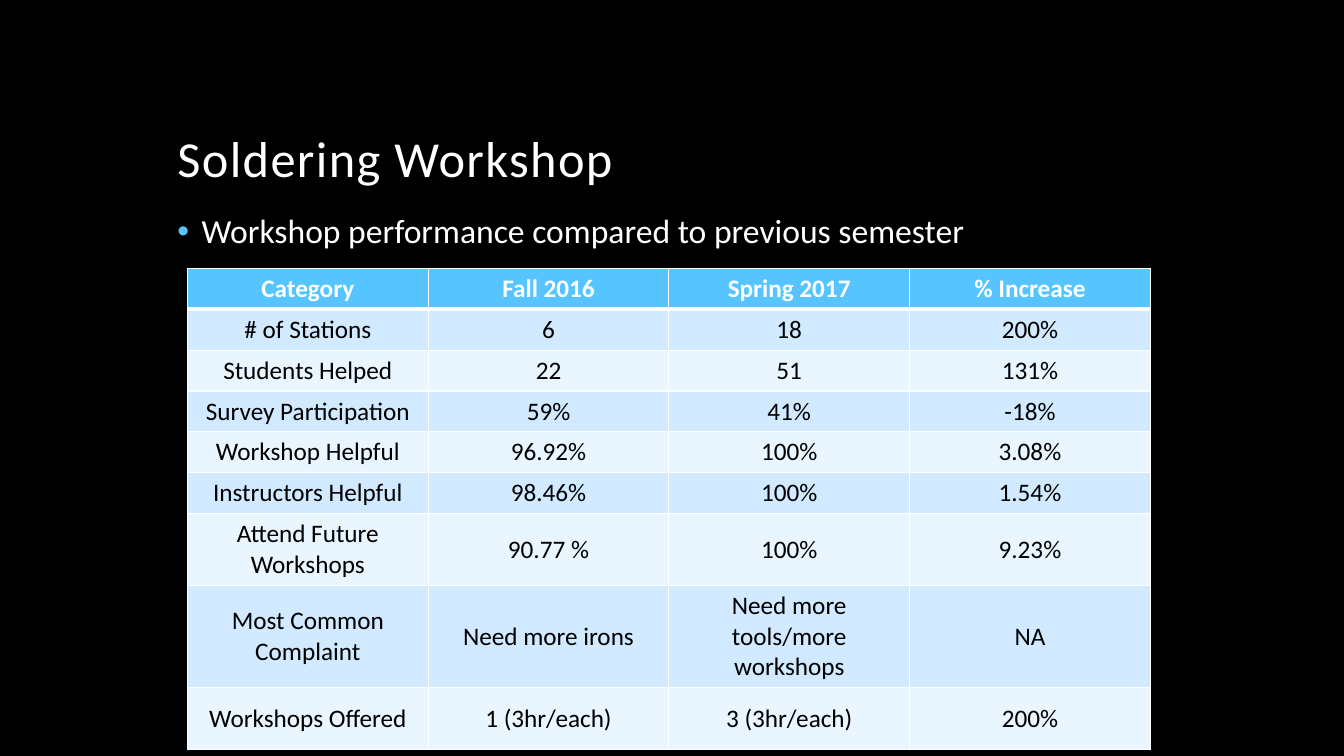
from dataclasses import dataclass

from lxml import etree
from pptx import Presentation, util as u
from pptx.dml.color import RGBColor
from pptx.enum import text
from pptx.oxml import ns


@dataclass(frozen=True)
class Theme:
    font: str = "Calibri"
    background: str = "000000"
    light: str = "FFFFFF"
    dark: str = "000000"
    accent: str = "56C5FF"
    bands: tuple = ("D1EAFF", "E9F5FF")
    title_size: int = 36
    body_size: int = 24
    table_size: int = 18
    thin: int = 1
    thick: int = 3


def apply(target, values):
    for name, value in values.items():
        setattr(target, name, value)


def add_xml(parent, tag, **attributes):
    return etree.SubElement(parent, ns.qn(tag), attributes)


class WorkshopSlide:
    def __init__(self, deck, theme):
        self.theme = theme
        self.width, self.height = deck.slide_width, deck.slide_height
        self.slide = deck.slides.add_slide(deck.slide_layouts[1])
        self.paint(self.slide.background, theme.background)

    def x(self, percent):
        return round(self.width * percent / 100)

    def y(self, percent):
        return round(self.height * percent / 100)

    def place(self, left, top, width, height):
        return {"left": self.x(left), "top": self.y(top),
                "width": self.x(width), "height": self.y(height)}

    def paint(self, target, colour):
        target.fill.solid()
        target.fill.fore_color.rgb = RGBColor.from_string(colour)

    def add_words(self, paragraph, words, size, colour, bold=False):
        run = paragraph.add_run()
        run.text = words
        apply(run.font, {"name": self.theme.font, "size": u.Pt(size), "bold": bold})
        run.font.color.rgb = RGBColor.from_string(colour)
        return run

    def fill_placeholder(self, holder, area, words, size, anchor):
        apply(holder, self.place(*area))
        apply(holder.text_frame, {"word_wrap": True, "vertical_anchor": anchor,
                                  "auto_size": text.MSO_AUTO_SIZE.NONE})
        paragraph = holder.text_frame.paragraphs[0]
        apply(paragraph, {"alignment": text.PP_ALIGN.LEFT, "line_spacing": 0.9,
                          "space_before": u.Pt(0)})
        return paragraph, self.add_words(paragraph, words, size, self.theme.light)

    def title(self, words, area):
        _, run = self.fill_placeholder(self.slide.shapes.title, area, words,
                                       self.theme.title_size, text.MSO_ANCHOR.BOTTOM)
        run._r.get_or_add_rPr().set("spc", "100")

    def bullet(self, words, area):
        paragraph, _ = self.fill_placeholder(self.slide.placeholders[1], area, words,
                                             self.theme.body_size, text.MSO_ANCHOR.TOP)
        properties = paragraph._p.get_or_add_pPr()
        indent = u.Inches(0.24)
        properties.set("marL", str(indent))
        properties.set("indent", str(-indent))
        add_xml(add_xml(properties, "a:buClr"), "a:srgbClr", val=self.theme.accent)
        add_xml(properties, "a:buFont", typeface="Arial")
        add_xml(properties, "a:buChar", char="•")

    def borders(self, cell, top, bottom):
        properties = cell._tc.get_or_add_tcPr()
        sides = {"L": self.theme.thin, "R": self.theme.thin, "T": top, "B": bottom}
        for position, (side, points) in enumerate(sides.items()):
            line = add_xml(properties, f"a:ln{side}", w=str(u.Pt(points)))
            add_xml(add_xml(line, "a:solidFill"), "a:srgbClr", val=self.theme.light)
            properties.insert(position, line)

    def table(self, records, left, top, width, row_heights):
        theme = self.theme
        area = self.place(left, top, width, sum(row_heights))
        table = self.slide.shapes.add_table(len(records), len(records[0]),
                                            **area).table
        for row, height in zip(table.rows, row_heights):
            row.height = self.y(height)
        for row, record in enumerate(records):
            header = row == 0
            fill = theme.accent if header else theme.bands[(row - 1) % 2]
            colour = theme.light if header else theme.dark
            for column, words in enumerate(record):
                cell = table.cell(row, column)
                cell.vertical_anchor = text.MSO_ANCHOR.MIDDLE
                self.paint(cell, fill)
                self.borders(cell, theme.thick if row == 1 else theme.thin,
                             theme.thick if header else theme.thin)
                paragraph = cell.text_frame.paragraphs[0]
                paragraph.alignment = text.PP_ALIGN.CENTER
                self.add_words(paragraph, words, theme.table_size, colour, header)


RESULTS = [
    ("Category", "Fall 2016", "Spring 2017", "% Increase"),
    ("# of Stations", "6", "18", "200%"),
    ("Students Helped", "22", "51", "131%"),
    ("Survey Participation", "59%", "41%", "-18%"),
    ("Workshop Helpful", "96.92%", "100%", "3.08%"),
    ("Instructors Helpful", "98.46%", "100%", "1.54%"),
    ("Attend Future Workshops", "90.77 %", "100%", "9.23%"),
    ("Most Common Complaint", "Need more irons", "Need more tools/more workshops", "NA"),
    ("Workshops Offered", "1 (3hr/each)", "3 (3hr/each)", "200%"),
]


def main():
    deck = Presentation()
    apply(deck, {"slide_width": u.Inches(13.33), "slide_height": u.Inches(7.5)})
    workshop = WorkshopSlide(deck, Theme())
    workshop.title("Soldering Workshop", (12.45, 5.6, 75, 20))
    workshop.bullet("Workshop performance compared to previous semester",
                    (12.45, 27.73, 75, 8.93))
    workshop.table(RESULTS, 13.95, 35.5, 71.65, [5.07] * 6 + [8.8, 12.67, 8.13])
    deck.save("out.pptx")


if __name__ == "__main__":
    main()
